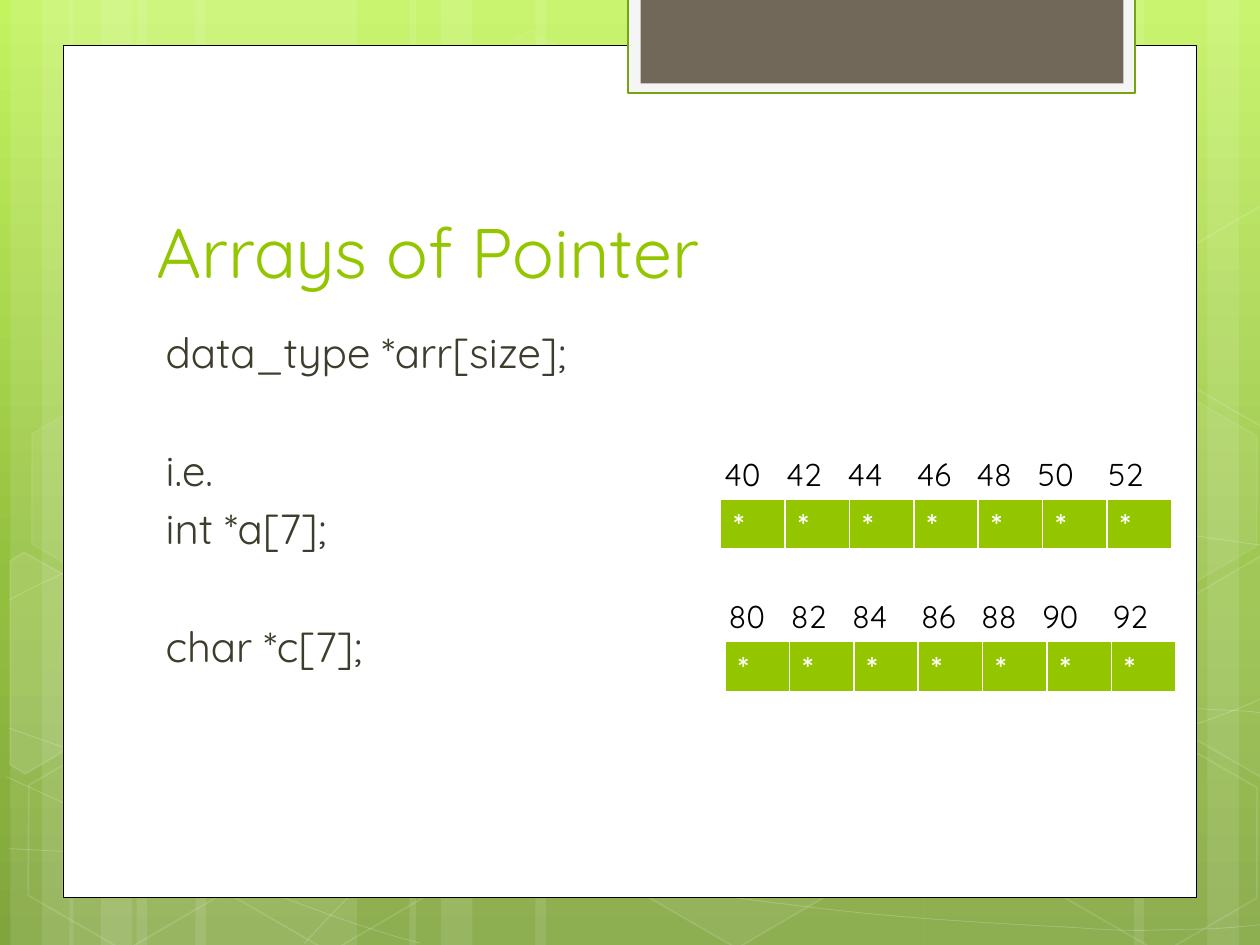
import copy
import math
import pptx
import pptx.util
import pptx.dml.color
import pptx.enum.shapes
import pptx.enum.text
import pptx.oxml
import pptx.oxml.ns

Pt = pptx.util.Pt
qn = pptx.oxml.ns.qn
NS = pptx.oxml.ns.nsdecls("a")
KIND = pptx.enum.shapes.MSO_SHAPE
FONT = "Quicksand"
HUES = {"white": "FFFFFF", "black": "000000", "lime": "94C600", "ink": "3E3D2D",
        "rim": "74A510", "mist": "F5F5F5", "brown": "71685A",
        "top": "C3F35F", "mid": "93BF3F", "base": "81A53E"}
WIDE, HIGH, TILT = 720, 540, 30

# Content
TITLE = "Arrays of Pointer"
BODY = [("data_type *arr[size];", False), ("i.e.", True),
        ("int *a[7];", False), ("char *c[7];", True)]  # text, wide gap above
ARRAYS = [(411.8, 285.1, range(40, 54, 2)), (414.3, 366.5, range(80, 94, 2))]
TABS = [35.5, 70.5, 110, 144.2, 179.2, 219.5]

# Backdrop: bars are (left, width)
BARS = [(78, 126), (6, 36), (24, 60), (111.6, 126), (39.6, 36), (57.6, 60),
        (527.8, 126), (690, 36), (648, 60), (306, 222), (234, 36), (252, 60)]
# Bezier chains: start, then control, control, end
CURVES = [
    [(5, 485), (44, 487), (83, 489), (137, 488), (191, 487), (258, 486), (330, 479),
     (402, 472), (504, 458), (570, 444), (636, 431), (703, 409), (725, 397)],
    [(5, 343), (26, 332), (47, 321), (87, 310), (128, 300), (186, 284), (250, 279),
     (314, 274), (392, 273), (471, 279), (550, 284), (682, 307), (725, 312)],
    [(4, 444), (91, 484), (178, 523), (240, 539)],
    [(5, 416), (27, 424), (50, 432), (92, 444), (134, 454), (197, 472), (257, 485),
     (317, 497), (392, 510), (452, 517), (512, 525), (576, 528), (614, 530),
     (652, 533), (662, 531), (680, 531), (699, 531), (712, 529), (725, 528)],
    [(174, 539), (187, 525), (200, 510), (217, 498), (235, 485), (259, 470), (279, 460),
     (300, 450), (312, 446), (338, 438), (364, 431), (413, 421), (438, 416),
     (464, 412), (467, 412), (490, 410), (512, 408), (547, 405), (572, 405),
     (597, 404), (638, 405), (638, 405), (654, 405), (670, 405), (686, 405),
     (699, 406), (711, 406), (718, 407), (724, 408), (722, 407), (724, 408)],
]
# Hexagons: left, top, fill opacity, line opacity
HEXES = [(240.5, 26, 4, 8), (357.8, 424, 6, 12), (8, 425.5, 0, 12),
         (10, 224.6, 7, 8), (125.3, 426.2, 0, 12), (542.2, 326.2, 10, 12),
         (600.5, 427, 0, 12), (600.5, 226, 7, 8)]
# Cut hexagons at the edges: centre, points, fill opacity
CUTS = [((25.9, 385.2), [(5.8, 320.4), (13.7, 315.4), (69.1, 347),
                         (68.4, 410.4), (14.4, 442.1), (5.8, 437)], 10),
        ((709.2, 374.4), [(666.7, 349.2), (720.7, 317.5), (726.5, 321.1),
                          (726.5, 441.4), (721.4, 444.2), (666.7, 412.6)], 4),
        ((709.2, 173.5), [(666.7, 149), (720.7, 117.4), (727.2, 121),
                          (726.5, 241.2), (721.4, 244.1), (666.7, 212.4)], 0)]
# Panels: left, top, width, height, fill, line, line width
PANELS = [(36, 25.9, 648, 487, "white", "black", 0.5),
          (359.1, -1.4, 289.6, 54.7, "mist", "rim", 1.25),
          (366, -1.4, 276, 49, "brown", None, 0)]


def rgb(hue):
    return pptx.dml.color.RGBColor.from_string(HUES[hue])


def tint(fill, hue, node, alpha=100):
    """Solid fill; node gives the XML part that holds its colour."""
    if not alpha:
        fill.background()
        return
    fill.solid()
    fill.fore_color.rgb = rgb(hue)
    if alpha < 100:
        clr = node().find(qn("a:solidFill"))[0]
        clr.append(pptx.oxml.parse_xml(f'<a:alpha {NS} val="{alpha * 1000}"/>'))


def paint(shape, fill, alpha=100, line=None, width=0, veil=100):
    shape.shadow.inherit = False
    props = shape.element.spPr
    tint(shape.fill, fill, lambda: props, alpha)
    if line:
        shape.line.width = Pt(width)
        tint(shape.line.fill, line, lambda: props.find(qn("a:ln")), veil)
    else:
        shape.line.fill.background()


def block(kind, *box):
    return slide.shapes.add_shape(kind, *map(Pt, box))


def trace(dots, close):
    dots = [(Pt(x), Pt(y)) for x, y in dots]
    pen = slide.shapes.build_freeform(*dots[0])
    pen.add_line_segments(dots[1:], close=close)
    return pen.convert_to_shape()


def bend(shape):
    """Join each three line steps into one cubic curve."""
    route = shape.element.find(".//" + qn("a:path"))
    legs = route.findall(qn("a:lnTo"))
    for i in range(0, len(legs), 3):
        arc = pptx.oxml.parse_xml(f"<a:cubicBezTo {NS}/>")
        for leg in legs[i:i + 3]:
            arc.append(leg[0])
            route.remove(leg)
        route.append(arc)
    return shape


def turn(dots, mid):
    """Points turned back by the tilt about mid."""
    c, s = math.cos(math.radians(TILT)), math.sin(math.radians(TILT))
    for x, y in dots:
        dx, dy = x - mid[0], y - mid[1]
        yield mid[0] + dx * c + dy * s, mid[1] - dx * s + dy * c


def style(para, size, hue, bold=False):
    for run in para.runs:
        run.font.name, run.font.size, run.font.bold = FONT, Pt(size), bold
        run.font.color.rgb = rgb(hue)


def label(box, text, size, hue):
    frame = slide.shapes.add_textbox(*map(Pt, box)).text_frame
    frame.word_wrap = True
    frame.text = text
    for para in frame.paragraphs:
        style(para, size, hue)
    return frame


def edge(cell):
    props = cell._tc.get_or_add_tcPr()
    for i, (side, width) in enumerate([("L", 1), ("R", 1), ("T", 1), ("B", 3)]):
        props.insert(i, pptx.oxml.parse_xml(
            f'<a:ln{side} {NS} w="{Pt(width)}"><a:solidFill>'
            f'<a:srgbClr val="{HUES["white"]}"/></a:solidFill></a:ln{side}>'))


deck = pptx.Presentation()
deck.slide_width, deck.slide_height = Pt(WIDE), Pt(HIGH)
slide = deck.slides.add_slide(deck.slide_layouts[6])

# Background gradient
back = slide.background.fill
back.gradient()
back.gradient_angle = 270
stops = slide.element.find(".//" + qn("a:gsLst"))
stops.insert(1, copy.deepcopy(stops[0]))
for stop, hue, spot in zip(back.gradient_stops, ("top", "mid", "base"), (0, 0.62, 1)):
    stop.color.rgb = rgb(hue)
    stop.position = spot

# Bars, curves and hexagons
for left, width in BARS:
    paint(block(KIND.RECTANGLE, left, 0, width, HIGH), "white", 10)
for knots in CURVES:
    paint(bend(trace(knots, False)), "white", 0, "white", 0.5, 20)
for left, top, alpha, veil in HEXES:
    tile = block(KIND.HEXAGON, left, top, 126, 109.4)
    tile.adjustments[0] = 0.285
    tile.rotation = TILT
    paint(tile, "white", alpha, "white", 1, veil)
for mid, dots, alpha in CUTS:
    tile = trace(turn(dots, mid), True)
    tile.rotation = TILT
    paint(tile, "white", alpha, "white", 1, 12)

# Panels
for *box, fill, line, width in PANELS:
    paint(block(KIND.RECTANGLE, *box), fill, 100, line, width)

# Title and body
head = label((82.1, 80.6, 553, 90), TITLE, 40, "lime")
head.vertical_anchor = pptx.enum.text.MSO_ANCHOR.BOTTOM
body = label((82.1, 182.9, 533.5, 276.5), "\n".join(t for t, _ in BODY), 24, "ink")
for para, (_, apart) in zip(body.paragraphs, BODY):
    para.space_before = Pt(38.8 if apart else 4.4)
    para._p.get_or_add_pPr().set("marL", str(Pt(5.4)))

# Arrays with their addresses
for left, top, spots in ARRAYS:
    grid = slide.shapes.add_table(1, len(spots), Pt(left), Pt(top),
                                  Pt(257.6), Pt(29.6)).table
    for col, cell in zip(grid.columns, grid.rows[0].cells):
        col.width = Pt(36.8)
        cell.text = "*"
        style(cell.text_frame.paragraphs[0], 18, "white", True)
        cell.fill.solid()
        cell.fill.fore_color.rgb = rgb("lime")
        edge(cell)
    row = label((left - 5, top - 28.8, 262, 28.8), "\t".join(map(str, spots)), 18, "black")
    marks = "".join(f'<a:tab pos="{Pt(t)}" algn="l"/>' for t in TABS)
    row.paragraphs[0]._p.get_or_add_pPr().append(pptx.oxml.parse_xml(
        f"<a:tabLst {NS}>{marks}</a:tabLst>"))

deck.save("out.pptx")
